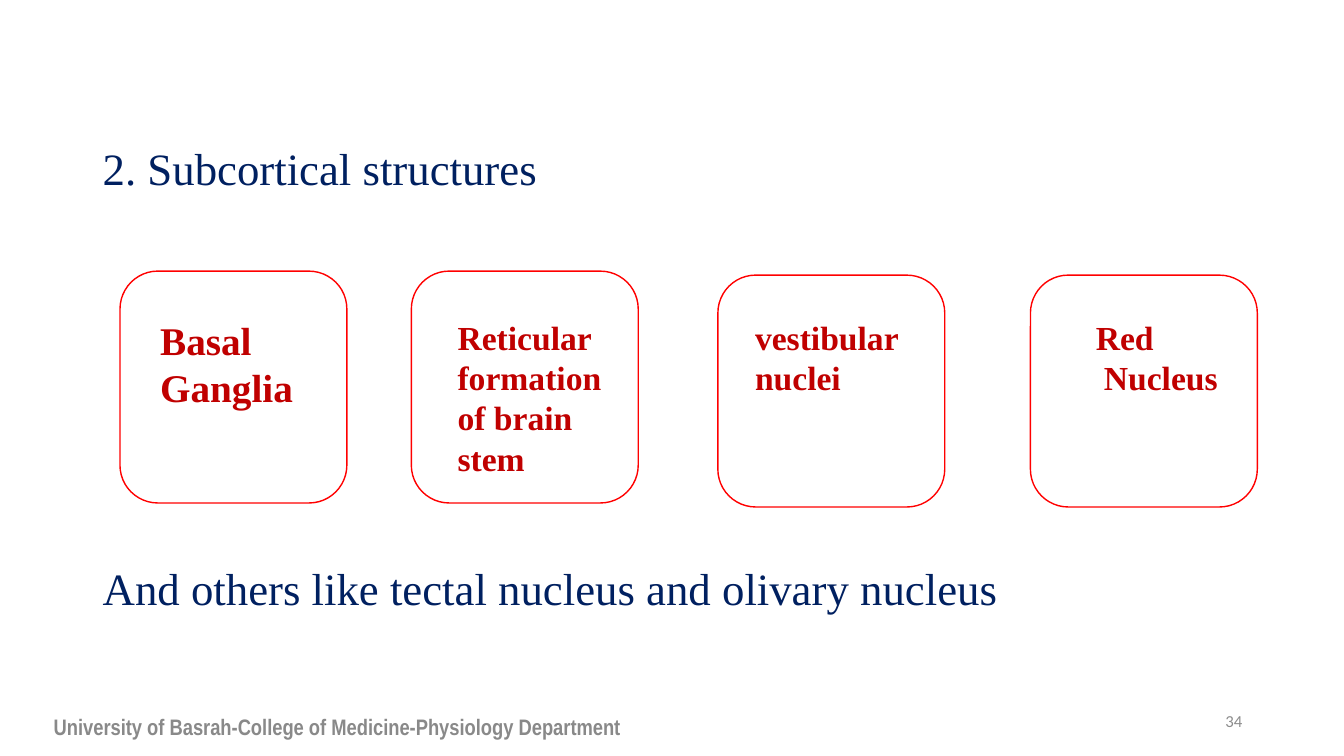
from dataclasses import dataclass

from pptx import Presentation
from pptx.dml.color import RGBColor
from pptx.enum.shapes import MSO_SHAPE
from pptx.enum.text import MSO_ANCHOR, PP_ALIGN
from pptx.slide import Slide
from pptx.util import Inches, Pt

COLORS = {
    "navy": "002060",
    "outline": "FF0000",
    "label": "C00000",
    "footer": "898989",
    "number": "8C8C8C",
}
SERIF = "Times New Roman"
CARD_W, CARD_H = 2.25, 2.3
LABEL_TOP = 3.09


@dataclass
class Structure:
    lines: list[str]
    left: float
    top: float
    label_left: float
    label_width: float
    label_height: float
    size: int = 24
    indent: float = 0


STRUCTURES = [
    Structure(["Basal Ganglia"], 1.19, 2.69, 1.49, 1.85, 1.04, size=28),
    Structure(["Reticular formation of brain stem"], 4.08, 2.69, 4.44, 1.7, 1.72),
    Structure(["vestibular nuclei"], 7.12, 2.73, 7.39, 2.1, 0.91),
    Structure(["Red", "Nucleus"], 10.22, 2.73, 10.77, 2.04, 0.91, indent=0.08),
]


def add_text(s: Slide, lines: list[str], left: float, top: float,
             width: float, height: float, *, size: int, color: str,
             font: str = SERIF, bold: bool = False, spacing: float = 1.0,
             align: PP_ALIGN = PP_ALIGN.LEFT,
             anchor: MSO_ANCHOR = MSO_ANCHOR.TOP, indent: float = 0) -> None:
    sp = s.shapes.add_textbox(Inches(left), Inches(top),
                              Inches(width), Inches(height))
    tf = sp.text_frame
    tf.word_wrap = True
    tf.vertical_anchor = anchor
    for i, line in enumerate(lines):
        p = tf.add_paragraph() if i else tf.paragraphs[0]
        p.alignment = align
        p.line_spacing = spacing
        if i and indent:
            p._p.get_or_add_pPr().set("marL", str(Inches(indent)))
        r = p.add_run()
        r.text = line
        r.font.name = font
        r.font.size = Pt(size)
        r.font.bold = bold
        r.font.color.rgb = RGBColor.from_string(COLORS[color])


def add_card(s: Slide, item: Structure) -> None:
    sp = s.shapes.add_shape(MSO_SHAPE.ROUNDED_RECTANGLE, Inches(item.left),
                            Inches(item.top), Inches(CARD_W), Inches(CARD_H))
    sp.shadow.inherit = False
    sp.fill.background()
    sp.line.color.rgb = RGBColor.from_string(COLORS["outline"])
    sp.line.width = Pt(1)
    add_text(s, item.lines, item.label_left, LABEL_TOP, item.label_width,
             item.label_height, size=item.size, color="label", bold=True,
             indent=item.indent)


def main() -> None:
    prs = Presentation()
    prs.slide_width, prs.slide_height = Inches(13.33), Inches(7.5)
    s = prs.slides.add_slide(prs.slide_layouts[6])
    for line, top in (
        ("2. Subcortical structures", 1.41),
        ("And others like tectal nucleus and olivary nucleus", 5.57),
    ):
        add_text(s, [line], 0.92, top, 11.5, 0.6, size=32, color="navy",
                 spacing=0.9)
    for item in STRUCTURES:
        add_card(s, item)
    add_text(s, ["University of Basrah-College of Medicine-Physiology Department"],
             0.25, 7.01, 6.19, 0.4, size=16, color="footer",
             font="Arial Narrow", bold=True, align=PP_ALIGN.CENTER,
             anchor=MSO_ANCHOR.MIDDLE)
    add_text(s, ["34"], 9.42, 6.95, 3, 0.4, size=12, color="number",
             font="Calibri", align=PP_ALIGN.RIGHT, anchor=MSO_ANCHOR.MIDDLE)
    prs.save("out.pptx")


if __name__ == "__main__":
    main()
